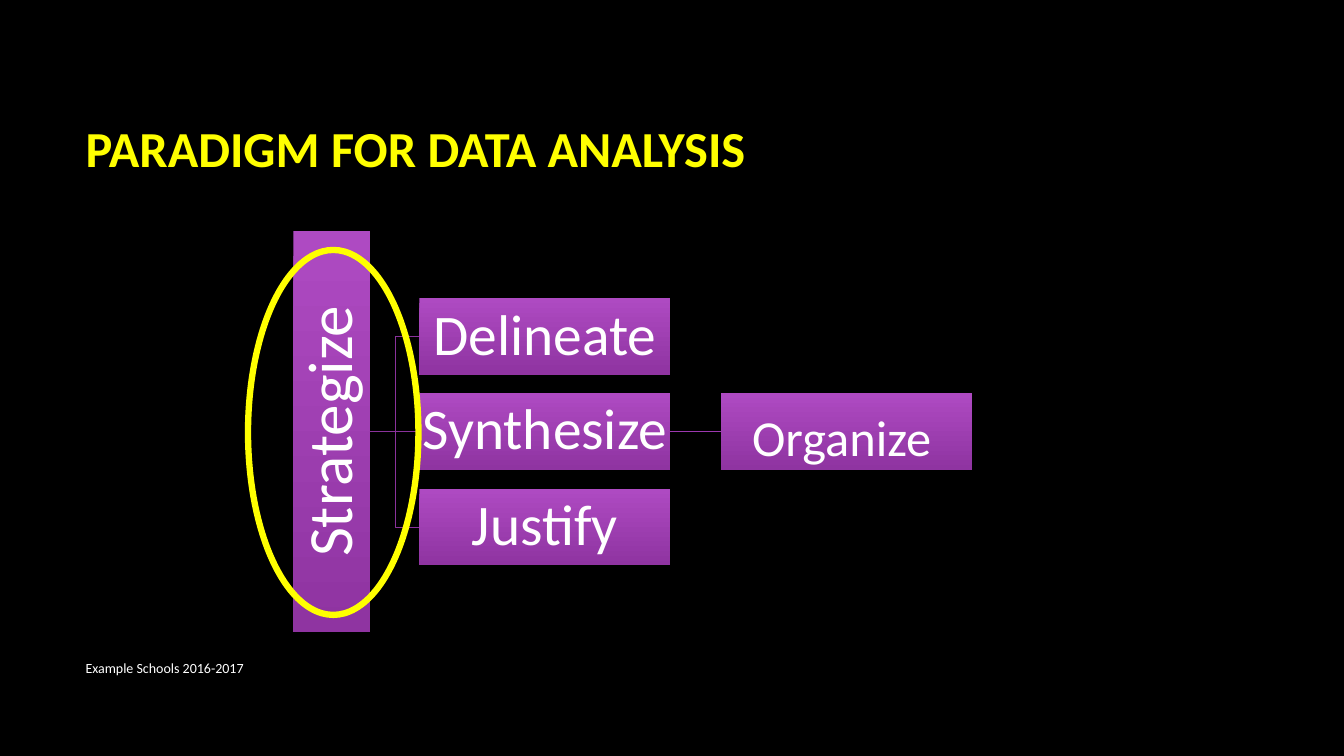
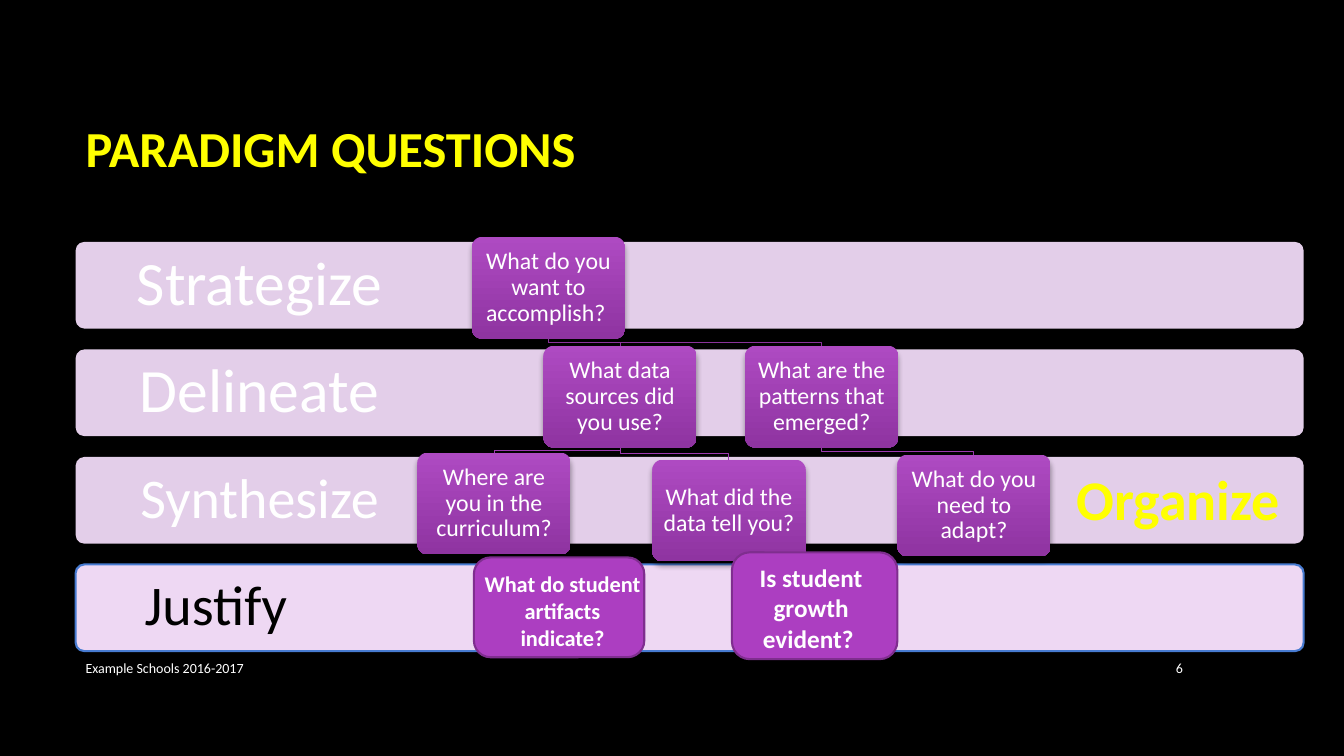
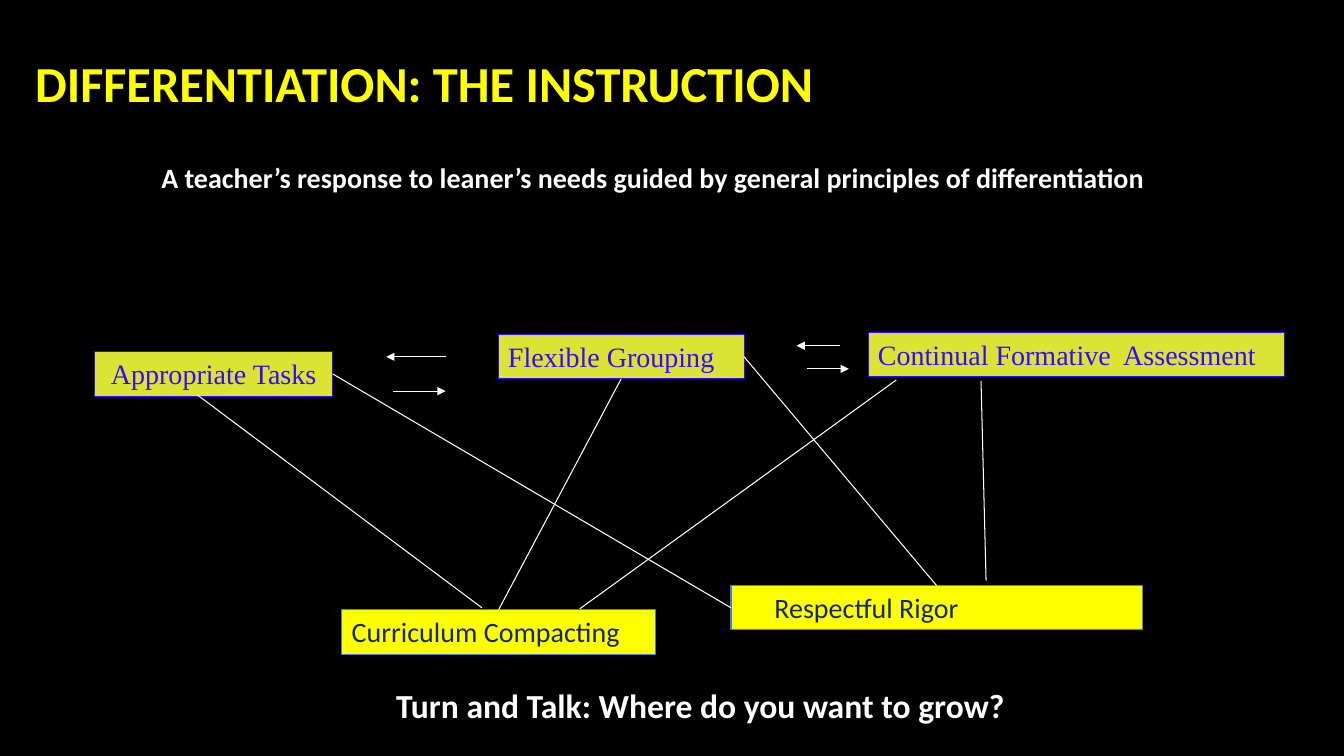
from lxml import etree
from pptx import Presentation
from pptx.dml import color
from pptx.enum import shapes, text
from pptx.oxml import ns
from pptx.util import Inches, Pt

colour = color.RGBColor.from_string
Kind = shapes.MSO_SHAPE
Align = text.PP_ALIGN
Anchor = text.MSO_ANCHOR

WHITE, YELLOW, BLACK = "FFFFFF", "FFFF00", "000000"
PURPLE = ("AE4AC2", "8F34A1")
DARK_LINK, LIGHT_LINK = "8A329B", "9C38AF"


def add(page, at, words="", kind=None, fill=None, line=None, width=0.75, adjust=None,
        shadow=False, size=20, ink=WHITE, bold=False, font="Calibri", align=Align.LEFT,
        anchor=Anchor.MIDDLE, margins=(0.1, 0.05, 0.1, 0.05), spacing=None, wrap=True):
    place = [Inches(value) for value in at]
    if kind is None:
        box = page.shapes.add_textbox(*place)
    else:
        box = page.shapes.add_shape(kind, *place)
        box.shadow.inherit = False
        if adjust is not None:
            box.adjustments[0] = adjust
        if fill is None:
            box.fill.background()
        elif isinstance(fill, tuple):
            box.fill.gradient()
            box.fill.gradient_angle = 270
            for stop, tone in zip(box.fill.gradient_stops, fill):
                stop.color.rgb = colour(tone)
        else:
            box.fill.solid()
            box.fill.fore_color.rgb = colour(fill)
        if line:
            box.line.color.rgb = colour(line)
            box.line.width = Pt(width)
        else:
            box.line.fill.background()
        if shadow:
            effects = box._element.spPr.find(ns.qn("a:effectLst"))
            outer = etree.SubElement(effects, ns.qn("a:outerShdw"), blurRad=str(Pt(4)),
                                     dist=str(Pt(3)), dir="5400000", rotWithShape="0")
            tone = etree.SubElement(outer, ns.qn("a:srgbClr"), val=BLACK)
            etree.SubElement(tone, ns.qn("a:alpha"), val="35000")
    if words:
        frame = box.text_frame
        frame.word_wrap = wrap
        frame.vertical_anchor = anchor
        (frame.margin_left, frame.margin_top,
         frame.margin_right, frame.margin_bottom) = [Inches(value) for value in margins]
        para = frame.paragraphs[0]
        para.alignment = align
        if spacing:
            para.line_spacing = spacing
        span = para.add_run()
        span.text = words
        span.font.name = font
        span.font.size = Pt(size)
        span.font.bold = bold
        span.font.color.rgb = colour(ink)
    return box


def link(page, points, ink=WHITE, begin=None, end=None, arrow=False):
    spots = [(Inches(x), Inches(y)) for x, y in points]
    if len(spots) == 2:
        route = page.shapes.add_connector(shapes.MSO_CONNECTOR.STRAIGHT, *spots[0], *spots[1])
        if begin:
            route.begin_connect(*begin)
        if end:
            route.end_connect(*end)
    else:
        builder = page.shapes.build_freeform(*spots[0])
        builder.add_line_segments(spots[1:], close=False)
        route = builder.convert_to_shape()
        route.fill.background()
        route.shadow.inherit = False
    route.line.color.rgb = colour(ink)
    route.line.width = Pt(0.75)
    if arrow:
        etree.SubElement(route.line._get_or_add_ln(), ns.qn("a:tailEnd"), type="triangle")
    if len(spots) == 2:
        etree.SubElement(route._element.spPr, ns.qn("a:effectLst"))


deck = Presentation()
deck.slide_width, deck.slide_height = Inches(13.33), Inches(7.5)
pages = []
for title, left, top, footer in (
    ("PARADIGM FOR DATA ANALYSIS", 0.75, 0.67, True),
    ("PARADIGM QUESTIONS", 0.75, 0.67, True),
    ("DIFFERENTIATION: THE INSTRUCTION", 0.25, 0.02, False),
):
    page = deck.slides.add_slide(deck.slide_layouts[6])
    page.background.fill.solid()
    page.background.fill.fore_color.rgb = colour(BLACK)
    add(page, (left, top, 11.08, 1.59), title, size=36, ink=YELLOW, bold=True)
    if footer:
        add(page, (0.75, 6.42, 8.56, 0.41), "Example Schools 2016-2017", size=10)
    pages.append(page)
paradigm, questions, instruction = pages

node = dict(kind=Kind.RECTANGLE, fill=PURPLE, shadow=True, align=Align.CENTER,
            margins=(0, 0.03, 0, 0.03), spacing=0.9)
strategize = add(paradigm, (2.91, 2.29, 0.76, 3.98), "Strategize", size=45, **node)
strategize.text_frame._txBody.bodyPr.set("vert", "vert270")
steps = {}
for name, top in (("Delineate", 2.96), ("Synthesize", 3.9), ("Justify", 4.85)):
    steps[name] = add(paradigm, (4.16, top, 2.49, 0.76), name, size=41, **node)
organize = add(paradigm, (7.15, 3.9, 2.49, 0.76), "Organize", kind=Kind.RECTANGLE, fill=PURPLE,
               shadow=True, size=36, anchor=Anchor.TOP, margins=(0.31, 0.13, 0, 0))
for y in (3.34, 5.23):
    link(paradigm, [(3.67, 4.28), (3.92, 4.28), (3.92, y), (4.16, y)], DARK_LINK)
link(paradigm, [(3.67, 4.28), (4.16, 4.28)], DARK_LINK,
     (strategize, 3), (steps["Synthesize"], 1))
link(paradigm, [(6.65, 4.28), (7.15, 4.28)], LIGHT_LINK,
     (steps["Synthesize"], 3), (organize, 1))
add(paradigm, (2.46, 2.48, 1.69, 3.62), kind=Kind.OVAL, line=YELLOW, width=4.5)

for row, (name, size) in enumerate((("Strategize", 44), ("Delineate", 44), ("Synthesize", 40))):
    add(questions, (0.75, 2.4 + 1.067 * row, 12.18, 0.86), name, kind=Kind.ROUNDED_RECTANGLE,
        fill="E3CEE9", adjust=0.1, shadow=True, size=size, align=Align.CENTER,
        margins=(0, 0, 8.53, 0), spacing=0.9)
add(questions, (0.75, 5.6, 12.18, 0.86), "Justify", kind=Kind.ROUNDED_RECTANGLE, fill="EED8F3",
    line="477BD1", width=1.5, adjust=0.1, size=40, ink=BLACK, margins=(0.66, 0, 8.53, 0),
    spacing=0.9)

card_width, card_height = 1.52, 1.01
cards = {
    "accomplish": (4.68, 2.35, "What do you want to accomplish? "),
    "sources": (5.39, 3.43, "What data sources did you use?"),
    "curriculum": (4.14, 4.49, "Where are you in the curriculum?"),
    "data": (6.47, 4.56, "What did the data tell you?"),
    "patterns": (7.39, 3.43, "What are the patterns that emerged?"),
    "adapt": (8.9, 4.51, "What do you need to adapt?"),
}
for left, top, words in cards.values():
    add(questions, (left, top, card_width, card_height), words, kind=Kind.ROUNDED_RECTANGLE,
        fill=PURPLE, adjust=0.1, shadow=True, size=17, align=Align.CENTER,
        margins=(0.07,) * 4, spacing=0.9)
for parent, child, ink in (
    ("accomplish", "sources", DARK_LINK),
    ("accomplish", "patterns", DARK_LINK),
    ("sources", "curriculum", LIGHT_LINK),
    ("sources", "data", LIGHT_LINK),
    ("patterns", "adapt", LIGHT_LINK),
):
    start_x, end_x = (cards[name][0] + card_width / 2 for name in (parent, child))
    start_y, end_y = cards[parent][1] + card_height, cards[child][1]
    middle = (start_y + end_y) / 2
    link(questions, [(start_x, start_y), (start_x, middle), (end_x, middle), (end_x, end_y)], ink)

for card, label, words, size in (
    ((4.7, 5.53, 1.69, 0.99), (4.68, 5.61, 1.8, 0.91), "What do student artifacts indicate?", 16),
    ((7.26, 5.48, 1.64, 1.06), (7.26, 5.53, 1.57, 1.01), "Is student growth evident? ", 18),
):
    add(questions, card, kind=Kind.ROUNDED_RECTANGLE, fill="AC3EC1", line="7F2E8F", width=1.5)
    add(questions, label, words, size=size, bold=True, align=Align.CENTER, anchor=Anchor.TOP)
add(questions, (10.58, 4.56, 2.5, 0.77), "Organize", size=40, ink=YELLOW, bold=True,
    anchor=Anchor.TOP)
add(questions, (11.23, 6.42, 0.6, 0.41), "6", size=10, align=Align.RIGHT)

add(instruction, (0.22, 1.5, 12.51, 0.52),
    "A teacher’s response to leaner’s needs guided by general principles of differentiation",
    bold=True, align=Align.CENTER)
practice = dict(fill="DBE334", line="330AFF", ink="330AFF", font="Times New Roman")
support = dict(fill=YELLOW, line="477BD1", ink="18276C")
boxes = {}
for words, left, top, width, indent, look in (
    ("Appropriate Tasks", 0.94, 3.49, 2.36, 0.16, practice),
    ("Flexible Grouping", 4.94, 3.32, 2.44, 0.1, practice),
    ("Continual Formative  Assessment", 8.61, 3.3, 4.13, 0.1, practice),
    ("Curriculum Compacting", 3.39, 6.05, 3.11, 0.1, support),
    ("Respectful Rigor", 7.25, 5.81, 4.08, 0.43, support),
):
    boxes[words] = add(instruction, (left, top, width, 0.44), words, kind=Kind.RECTANGLE,
                       anchor=Anchor.TOP, margins=(indent, 0.05, 0.1, 0.05), **look)

tasks, grouping = boxes["Appropriate Tasks"], boxes["Flexible Grouping"]
compacting, rigor = boxes["Curriculum Compacting"], boxes["Respectful Rigor"]
for start, finish, begin, end in (
    ((1.96, 3.92), (4.78, 6.03), None, None),
    ((4.95, 6.05), (6.16, 3.76), (compacting, 0), (grouping, 2)),
    ((3.3, 3.71), (7.25, 6.03), (tasks, 3), (rigor, 1)),
    ((7.38, 3.54), (9.29, 5.81), (grouping, 3), (rigor, 0)),
    ((8.89, 3.77), (5.75, 6.04), None, None),
    ((9.73, 3.78), (9.78, 5.76), None, None),
):
    link(instruction, [start, finish], begin=begin, end=end)
for start, finish, y in ((3.9, 4.42, 3.88), (8, 8.42, 3.66), (4.42, 3.83, 3.54), (8.33, 7.9, 3.43)):
    link(instruction, [(start, y), (finish, y)], arrow=True)
add(instruction, (3.83, 6.75, 6.37, 0.5), "Turn and Talk: Where do you want to grow?", size=24,
    bold=True, anchor=Anchor.TOP, wrap=False)

deck.save("out.pptx")
